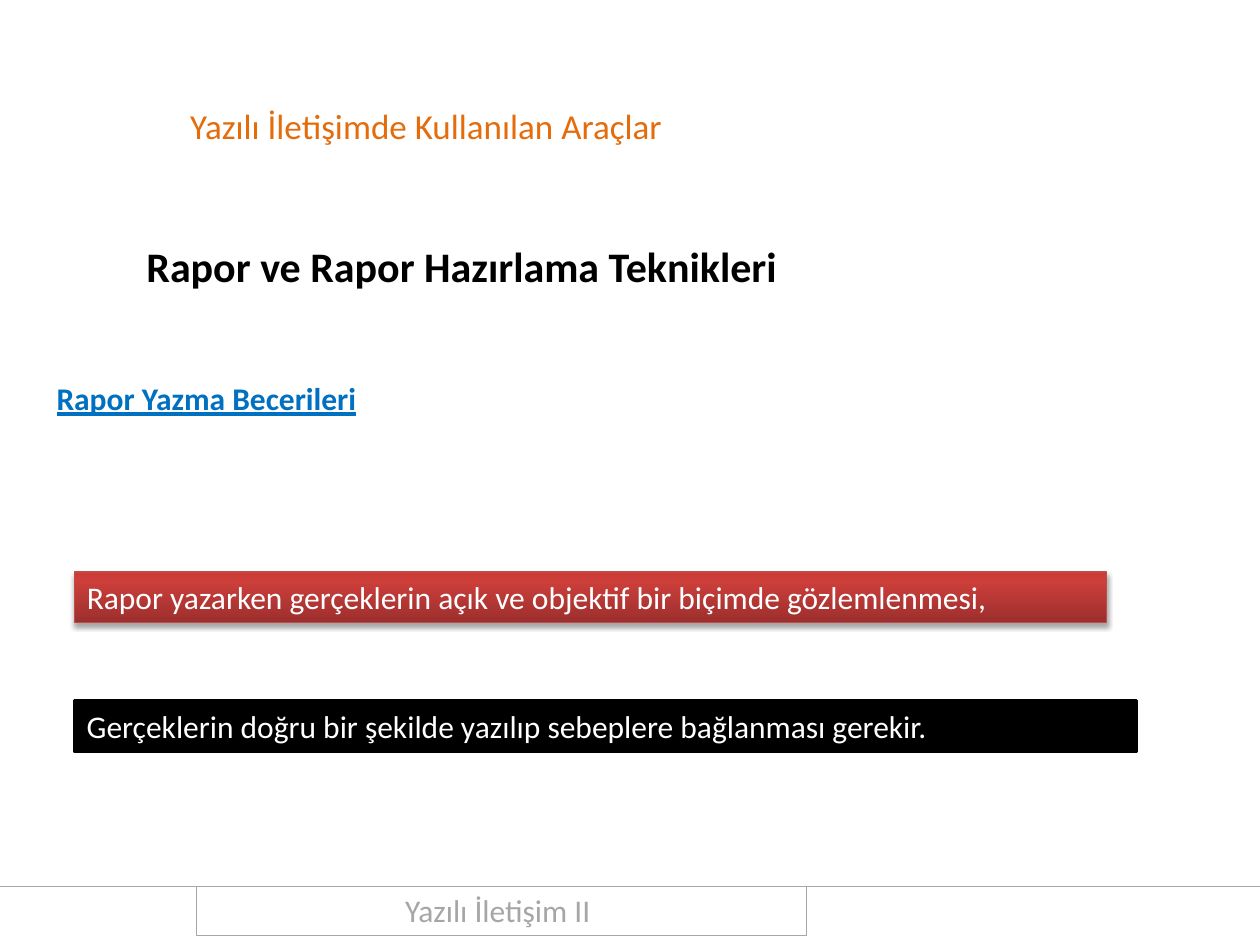
from lxml.etree import SubElement
from pptx import Presentation
from pptx.dml.color import RGBColor
from pptx.enum.shapes import MSO_CONNECTOR as CONN, MSO_SHAPE as SHAPE
from pptx.enum.text import MSO_ANCHOR as ANCHOR, MSO_AUTO_SIZE as FIT, PP_ALIGN as ALIGN
from pptx.oxml.ns import qn
from pptx.util import Inches, Pt

GRAY, BLACK, WHITE = "A6A6A6", "000000", "FFFFFF"
RED_STOPS = [(0, "9C2F2D"), (80, "CB3E3A"), (100, "CE3B37")]


def color(value):
    """Turn a hex string into a colour."""
    return RGBColor.from_string(value)


def write(sp, text, fmt, hue, align=ALIGN.LEFT, anchor=ANCHOR.TOP, fit=FIT.SHAPE_TO_FIT_TEXT):
    """Write one formatted paragraph into a shape."""
    tf = sp.text_frame
    tf.word_wrap = True
    tf.auto_size = fit
    tf.vertical_anchor = anchor
    p = tf.paragraphs[0]
    p.alignment = align
    r = p.add_run()
    r.text = text
    for name, value in {"name": "Calibri", **fmt}.items():
        setattr(r.font, name, value)
    r.font.color.rgb = color(hue)


def outline(sp, hue, width):
    """Set the line colour and width."""
    sp.line.color.rgb = color(hue)
    sp.line.width = Pt(width)


def add_title(s, box, text, fmt, hue):
    """Place and fill the title placeholder."""
    sp = s.shapes.title
    sp.left, sp.top, sp.width, sp.height = map(Inches, box)
    write(sp, text, fmt, hue)


def add_text(s, box, text, fmt, hue, align=ALIGN.LEFT):
    """Add a text box."""
    sp = s.shapes.add_textbox(*map(Inches, box))
    write(sp, text, fmt, hue, align)


def add_box(s, box, text, hue, line, width, fill=None, **layout):
    """Add an outlined rectangle with text."""
    sp = s.shapes.add_shape(SHAPE.RECTANGLE, *map(Inches, box))
    sp.shadow.inherit = False
    if fill:
        sp.fill.solid()
        sp.fill.fore_color.rgb = color(fill)
    else:
        sp.fill.background()
    outline(sp, line, width)
    write(sp, text, {"size": Pt(18)}, hue, **layout)
    return sp


def add_rule(s, y):
    """Add a thin line across the slide."""
    sp = s.shapes.add_connector(CONN.STRAIGHT, 0, Inches(y), Inches(10), Inches(y))
    outline(sp, GRAY, 0.25)
    SubElement(sp._element.spPr, qn("a:effectLst"))
    return sp


def add_stops(parent, stops):
    """Append gradient stops given as percent and colour."""
    for pos, hue in stops:
        gs = SubElement(parent, qn("a:gs"), pos=str(pos * 1000))
        SubElement(gs, qn("a:srgbClr"), val=hue)


def set_gradient(sp, stops):
    """Fill a shape with a gradient that runs upwards."""
    sp.fill.gradient()
    sp.fill.gradient_angle = 90
    gs_lst = sp._element.spPr.find(qn("a:gradFill")).find(qn("a:gsLst"))
    for gs in list(gs_lst):
        gs_lst.remove(gs)
    add_stops(gs_lst, stops)


def set_shadow(sp, opacity, blur, dist):
    """Give a shape a soft black shadow below it."""
    effects = sp._element.spPr.find(qn("a:effectLst"))
    shadow = SubElement(effects, qn("a:outerShdw"), blurRad=str(Pt(blur)),
                        dist=str(Pt(dist)), dir="5400000", rotWithShape="0")
    hue = SubElement(shadow, qn("a:srgbClr"), val=BLACK)
    SubElement(hue, qn("a:alpha"), val=str(opacity * 1000))


def main():
    """Build the slide."""
    prs = Presentation()
    prs.slide_width, prs.slide_height = Inches(10), Inches(7.5)
    s = prs.slides.add_slide(prs.slide_layouts[5])

    set_shadow(add_rule(s, 7.03), 40, 4, 3)
    add_title(s, (1.41, 0.78, 5.31, 0.44), "Yazılı İletişimde Kullanılan Araçlar",
              {"size": Pt(20)}, "E46C0A")
    add_text(s, (0.75, 1.86, 5.83, 0.5), "Rapor ve Rapor Hazırlama Teknikleri",
             {"size": Pt(24), "bold": True}, BLACK, ALIGN.CENTER)
    add_box(s, (1.56, 7.03, 4.84, 0.39), "Yazılı İletişim II ", GRAY, GRAY, 0.25,
            align=ALIGN.CENTER, anchor=ANCHOR.MIDDLE, fit=FIT.NONE)
    add_text(s, (0.35, 2.96, 3.39, 0.4), "Rapor Yazma Becerileri",
             {"size": Pt(18), "bold": True, "underline": True}, "0070C0")
    red = add_box(s, (0.59, 4.54, 8.19, 0.4),
                  "Rapor yazarken gerçeklerin açık ve objektif bir biçimde gözlemlenmesi,",
                  WHITE, "BF4C48", 0.75)
    set_gradient(red, RED_STOPS)
    set_shadow(red, 35, 3.1, 1.8)
    add_box(s, (0.59, 5.56, 8.43, 0.4),
            "Gerçeklerin doğru bir şekilde yazılıp sebeplere bağlanması gerekir.",
            WHITE, BLACK, 2, BLACK)
    prs.save("out.pptx")


if __name__ == "__main__":
    main()
